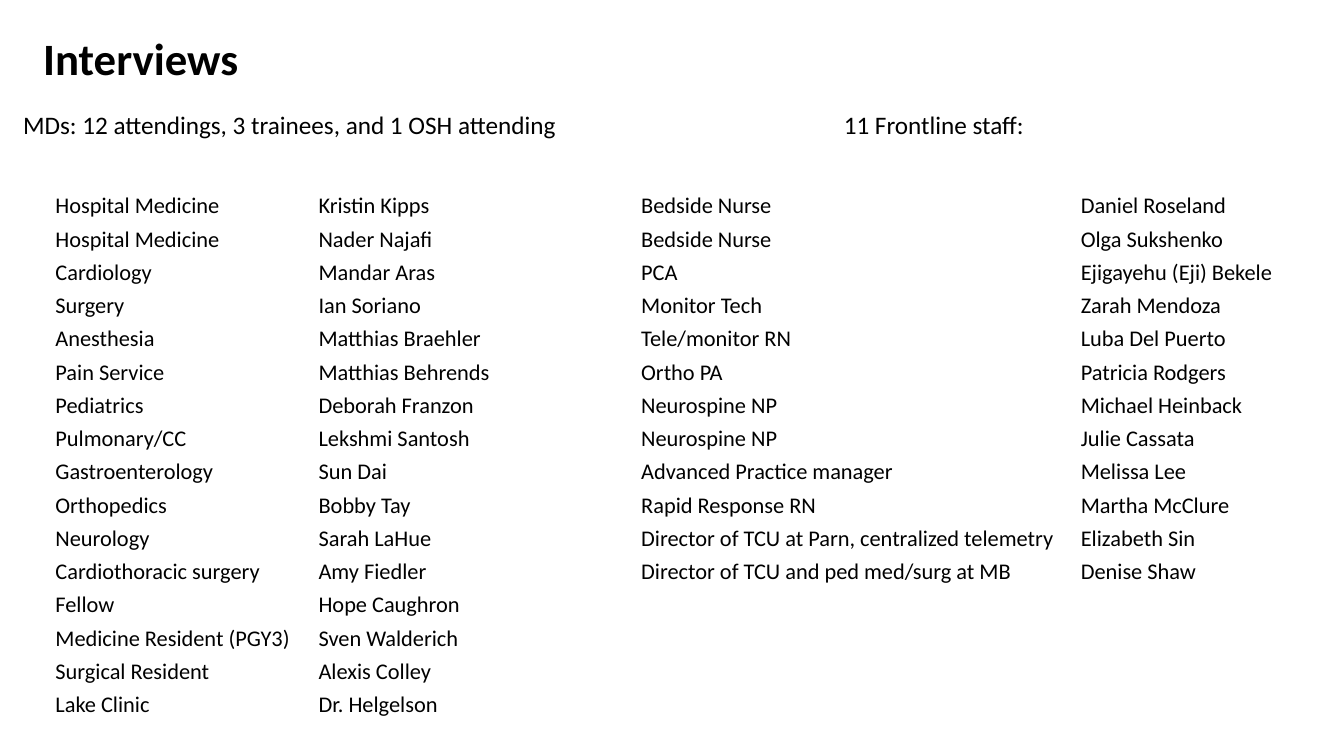
import pptx
import pptx.util
import pptx.dml.color
import pptx.enum.text

Inches, Pt = pptx.util.Inches, pptx.util.Pt
ANCHOR = pptx.enum.text.MSO_ANCHOR
BLACK = pptx.dml.color.RGBColor(0, 0, 0)
FONT = "Calibri"
ROW_HEIGHT = 0.33
TABLE_TOP = 1.9

TITLE = "Interviews"
# heading, heading left, heading width
HEADINGS = [
    ("MDs: 12 attendings, 3 trainees, and 1 OSH attending", 0.13, 5.95),
    ("11 Frontline staff:", 8.27, 5.88),
]
PHYSICIANS = [
    ("Hospital Medicine", "Kristin Kipps"),
    ("Hospital Medicine", "Nader Najafi"),
    ("Cardiology", "Mandar Aras"),
    ("Surgery", "Ian Soriano"),
    ("Anesthesia", "Matthias Braehler"),
    ("Pain Service", "Matthias Behrends"),
    ("Pediatrics", "Deborah Franzon"),
    ("Pulmonary/CC", "Lekshmi Santosh"),
    ("Gastroenterology", "Sun Dai"),
    ("Orthopedics", "Bobby Tay"),
    ("Neurology", "Sarah LaHue"),
    ("Cardiothoracic surgery", "Amy Fiedler"),
    ("Fellow", "Hope Caughron"),
    ("Medicine Resident (PGY3)", "Sven Walderich"),
    ("Surgical Resident", "Alexis Colley"),
    ("Lake Clinic", "Dr. Helgelson"),
]
FRONTLINE = [
    ("Bedside Nurse", "Daniel Roseland"),
    ("Bedside Nurse", "Olga Sukshenko"),
    ("PCA", "Ejigayehu (Eji) Bekele"),
    ("Monitor Tech", "Zarah Mendoza"),
    ("Tele/monitor RN", "Luba Del Puerto"),
    ("Ortho PA", "Patricia Rodgers"),
    ("Neurospine NP", "Michael Heinback"),
    ("Neurospine NP", "Julie Cassata"),
    ("Advanced Practice manager", "Melissa Lee"),
    ("Rapid Response RN", "Martha McClure"),
    ("Director of TCU at Parn, centralized telemetry", "Elizabeth Sin"),
    ("Director of TCU and ped med/surg at MB", "Denise Shaw"),
]
# rows, table left, column widths
TABLES = [
    (PHYSICIANS, 0.54, (2.61, 2.73)),
    (FRONTLINE, 6.35, (4.36, 2.76)),
]


def add_run(p, text, size, bold=False):
    r = p.add_run()
    r.text = text
    r.font.name = FONT
    r.font.size = Pt(size)
    r.font.bold = bold
    r.font.color.rgb = BLACK


def add_text(s, text, left, top, width, height, size, bold=False, anchor=ANCHOR.TOP):
    tf = s.shapes.add_textbox(Inches(left), Inches(top), Inches(width), Inches(height)).text_frame
    tf.word_wrap = True
    tf.vertical_anchor = anchor
    add_run(tf.paragraphs[0], text, size, bold)
    return tf


def add_people(s, rows, left, widths):
    """Add a plain two-column table of roles and names."""
    table = s.shapes.add_table(
        len(rows), len(widths), Inches(left), Inches(TABLE_TOP),
        Inches(sum(widths)), Inches(ROW_HEIGHT * len(rows))).table
    table.first_row = False
    table.horz_banding = False
    for column, width in zip(table.columns, widths):
        column.width = Inches(width)
    for i, row in enumerate(rows):
        table.rows[i].height = Inches(ROW_HEIGHT)
        for j, text in enumerate(row):
            cell = table.cell(i, j)
            cell.fill.background()
            cell.margin_left = cell.margin_right = cell.margin_top = Inches(0.01)
            cell.margin_bottom = Inches(0.05)
            cell.vertical_anchor = ANCHOR.BOTTOM
            add_run(cell.text_frame.paragraphs[0], text, 16)


def main():
    prs = pptx.Presentation()
    prs.slide_width, prs.slide_height = Inches(13.33), Inches(7.5)
    s = prs.slides.add_slide(prs.slide_layouts[6])
    title = add_text(s, TITLE, 0.33, 0.21, 11.5, 0.78, 32, True, ANCHOR.MIDDLE)
    title.paragraphs[0].line_spacing = 0.9
    for rows, left, widths in TABLES:
        add_people(s, rows, left, widths)
    for text, left, width in HEADINGS:
        add_text(s, text, left, 1.04, width, 0.4, 18)
    prs.save("out.pptx")


if __name__ == "__main__":
    main()
